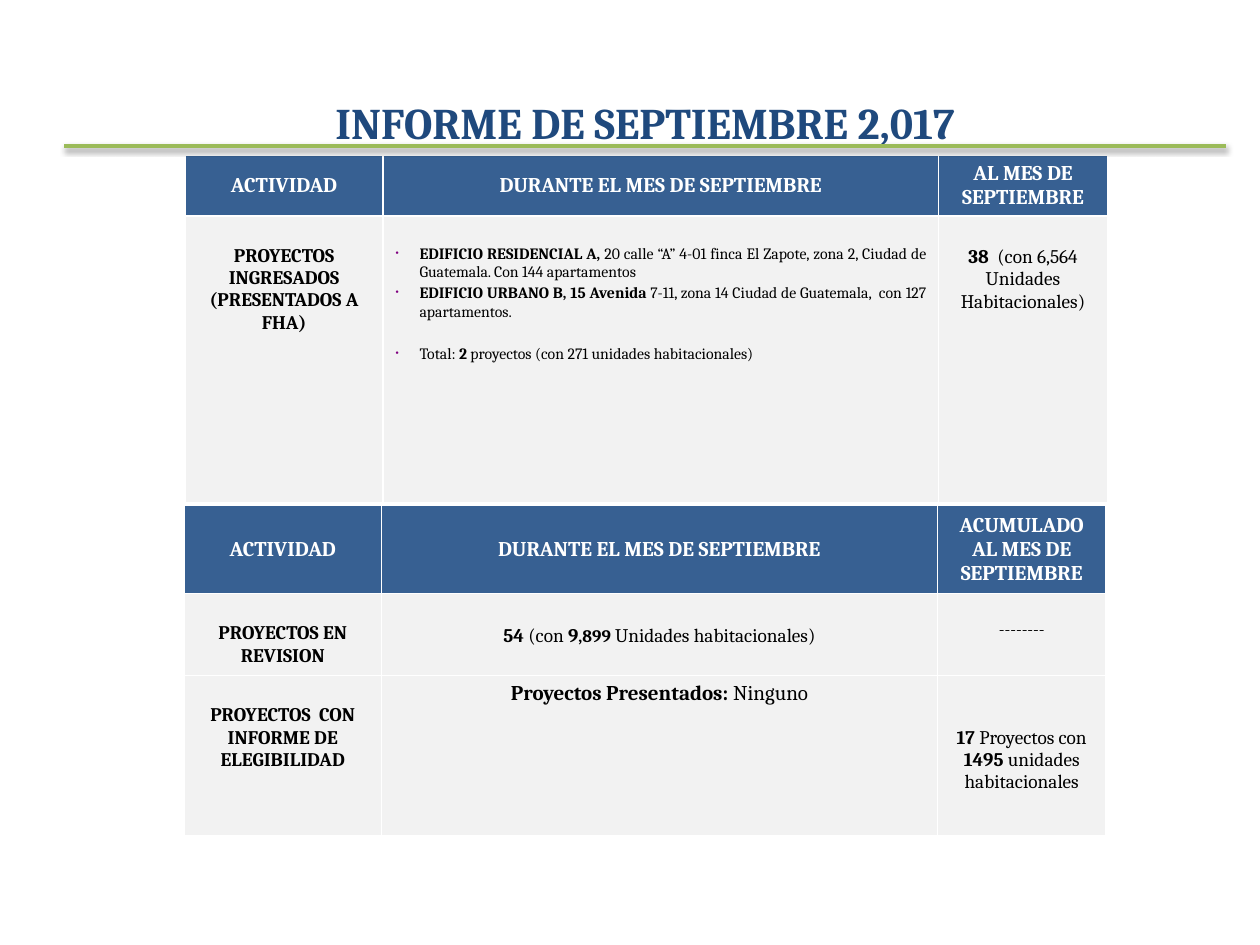
"""Build the September 2,017 project report slide with two activity tables."""
from lxml import etree
from pptx import Presentation
from pptx.dml.color import RGBColor
from pptx.enum.shapes import MSO_CONNECTOR
from pptx.enum.text import MSO_ANCHOR, MSO_AUTO_SIZE, PP_ALIGN
from pptx.oxml.ns import qn
from pptx.util import Inches, Pt

CENTER, JUSTIFY = PP_ALIGN.CENTER, PP_ALIGN.JUSTIFY
MIDDLE, TOP = MSO_ANCHOR.MIDDLE, MSO_ANCHOR.TOP
STRAIGHT = MSO_CONNECTOR.STRAIGHT
GROW = MSO_AUTO_SIZE.SHAPE_TO_FIT_TEXT

COLORS = {"title": "1F497D", "rule": "9BBB59", "header": "376092", "body": "F2F2F2",
          "white": "FFFFFF", "black": "000000", "bullet": "800080"}
FONT = "Cambria"
COLUMNS = [1.57, 4.41, 1.34]
TITLE = "INFORME DE SEPTIEMBRE 2,017"


def cell_content(paragraphs, size=11, top=0.23, gaps=(), bullets=False):
    return {"paragraphs": paragraphs, "size": size, "top": top,
            "gaps": gaps or [0] * len(paragraphs), "bullets": bullets}


TABLES = [
    {
        "place": (1.47, 1.23),
        "rows": [0.48, 2.28],
        "header": ["ACTIVIDAD", "DURANTE EL MES DE SEPTIEMBRE", "AL MES DE SEPTIEMBRE"],
        "body": [[
            cell_content([[("PROYECTOS INGRESADOS (PRESENTADOS A FHA)", True)]]),
            cell_content([
                [("EDIFICIO RESIDENCIAL A, ", True),
                 ("20 calle “A” 4-01 finca El Zapote, zona 2, Ciudad de Guatemala. "
                  "Con 144 apartamentos", False)],
                [("EDIFICIO URBANO B, 15 Avenida", True),
                 (" 7-11, zona 14 Ciudad de Guatemala,  con 127 apartamentos.", False)],
                [("Total: ", False), ("2", True),
                 (" proyectos (con 271 unidades habitacionales)", False)],
            ], size=9, gaps=[0, 1.8, 14], bullets=True),
            cell_content([[("38", True), ("  (con 6,564 Unidades Habitacionales)", False)]],
                         top=0.24),
        ]],
    },
    {
        "place": (1.46, 4.01),
        "rows": [0.7, 0.65, 1.27],
        "header": ["ACTIVIDAD", "DURANTE EL MES DE SEPTIEMBRE",
                   "ACUMULADO AL MES DE SEPTIEMBRE"],
        "body": [
            [
                cell_content([[("PROYECTOS EN REVISION", True)]]),
                cell_content([[("54 ", True), ("(con ", False), ("9", True),
                               (",899", True, 10), (" Unidades habitacionales)", False)]],
                             top=0.25),
                cell_content([[("--------", False)]], size=10, top=0.21),
            ],
            [
                cell_content([[("PROYECTOS  CON INFORME DE ELEGIBILIDAD", True)]]),
                cell_content([[("Proyectos Presentados: ", True), ("Ninguno", False)]],
                             size=12, top=0.05),
                cell_content([[("17", True), (" Proyectos con ", False), ("1495", True),
                               (" unidades habitacionales", False)]], top=0.41),
            ],
        ],
    },
]


def rgb(name):
    return RGBColor.from_string(COLORS[name])


def add_run(paragraph, text, size, color, bold):
    run = paragraph.add_run()
    run.text = text
    run.font.name = FONT
    run.font.size = Pt(size)
    run.font.bold = bold
    run.font.color.rgb = rgb(color)


def add_color(parent, name):
    return etree.SubElement(parent, qn("a:srgbClr"), val=COLORS[name])


def add_bullet(paragraph):
    properties = paragraph._p.get_or_add_pPr()
    properties.set("marL", str(Inches(0.19)))
    properties.set("indent", str(-Inches(0.19)))
    add_color(etree.SubElement(properties, qn("a:buClr")), "bullet")
    etree.SubElement(properties, qn("a:buSzPct"), val="60000")
    etree.SubElement(properties, qn("a:buChar"), char="•")


def add_borders(cell):
    properties = cell._tc.get_or_add_tcPr()
    for position, side in enumerate(("a:lnL", "a:lnR", "a:lnT", "a:lnB")):
        border = etree.Element(qn(side), w=str(Pt(1)))
        add_color(etree.SubElement(border, qn("a:solidFill")), "white")
        properties.insert(position, border)


def fill_cell(cell, content, fill, color, anchor):
    cell.fill.solid()
    cell.fill.fore_color.rgb = rgb(fill)
    add_borders(cell)
    cell.vertical_anchor = anchor
    cell.margin_top = Inches(content["top"])
    frame = cell.text_frame
    for index, (runs, gap) in enumerate(zip(content["paragraphs"], content["gaps"])):
        paragraph = frame.add_paragraph() if index else frame.paragraphs[0]
        if content["bullets"]:
            add_bullet(paragraph)
        paragraph.alignment = JUSTIFY if content["bullets"] else CENTER
        if gap:
            paragraph.space_before = Pt(gap)
        for text, bold, *size in runs:
            add_run(paragraph, text, size[0] if size else content["size"], color, bold)


def add_activity_table(slide, data):
    left, top = data["place"]
    table = slide.shapes.add_table(
        len(data["rows"]), len(COLUMNS), Inches(left), Inches(top),
        Inches(sum(COLUMNS)), Inches(sum(data["rows"]))).table
    table.horz_banding = False
    for column, width in zip(table.columns, COLUMNS):
        column.width = Inches(width)
    for row, height in zip(table.rows, data["rows"]):
        row.height = Inches(height)
    for column, text in enumerate(data["header"]):
        content = cell_content([[(text, True)]], size=12, top=0.05)
        fill_cell(table.cell(0, column), content, "header", "white", MIDDLE)
    for row, contents in enumerate(data["body"], 1):
        for column, content in enumerate(contents):
            fill_cell(table.cell(row, column), content, "body", "black", TOP)


def add_title(slide):
    box = slide.shapes.add_textbox(Inches(1.3), Inches(0.5), Inches(7.64), Inches(0.73))
    box.text_frame.word_wrap = True
    box.text_frame.auto_size = GROW
    paragraph = box.text_frame.paragraphs[0]
    paragraph.alignment = CENTER
    paragraph.line_spacing = 1.5
    add_run(paragraph, TITLE, 25, "title", True)


def add_rule(slide):
    rule = slide.shapes.add_connector(
        STRAIGHT, Inches(0.51), Inches(1.16), Inches(9.73), Inches(1.16))
    rule.line.color.rgb = rgb("rule")
    rule.line.width = Pt(2)
    effects = etree.SubElement(rule._element.spPr, qn("a:effectLst"))
    shadow = etree.SubElement(effects, qn("a:outerShdw"), blurRad=str(Pt(3.1)),
                              dist=str(Pt(1.6)), dir="5400000", rotWithShape="0")
    etree.SubElement(add_color(shadow, "black"), qn("a:alpha"), val="38000")


def main():
    presentation = Presentation()
    presentation.slide_width = Inches(10)
    presentation.slide_height = Inches(7.5)
    slide = presentation.slides.add_slide(presentation.slide_layouts[6])
    upper, lower = TABLES
    add_activity_table(slide, upper)
    add_title(slide)
    add_rule(slide)
    add_activity_table(slide, lower)
    presentation.save("out.pptx")


if __name__ == "__main__":
    main()
